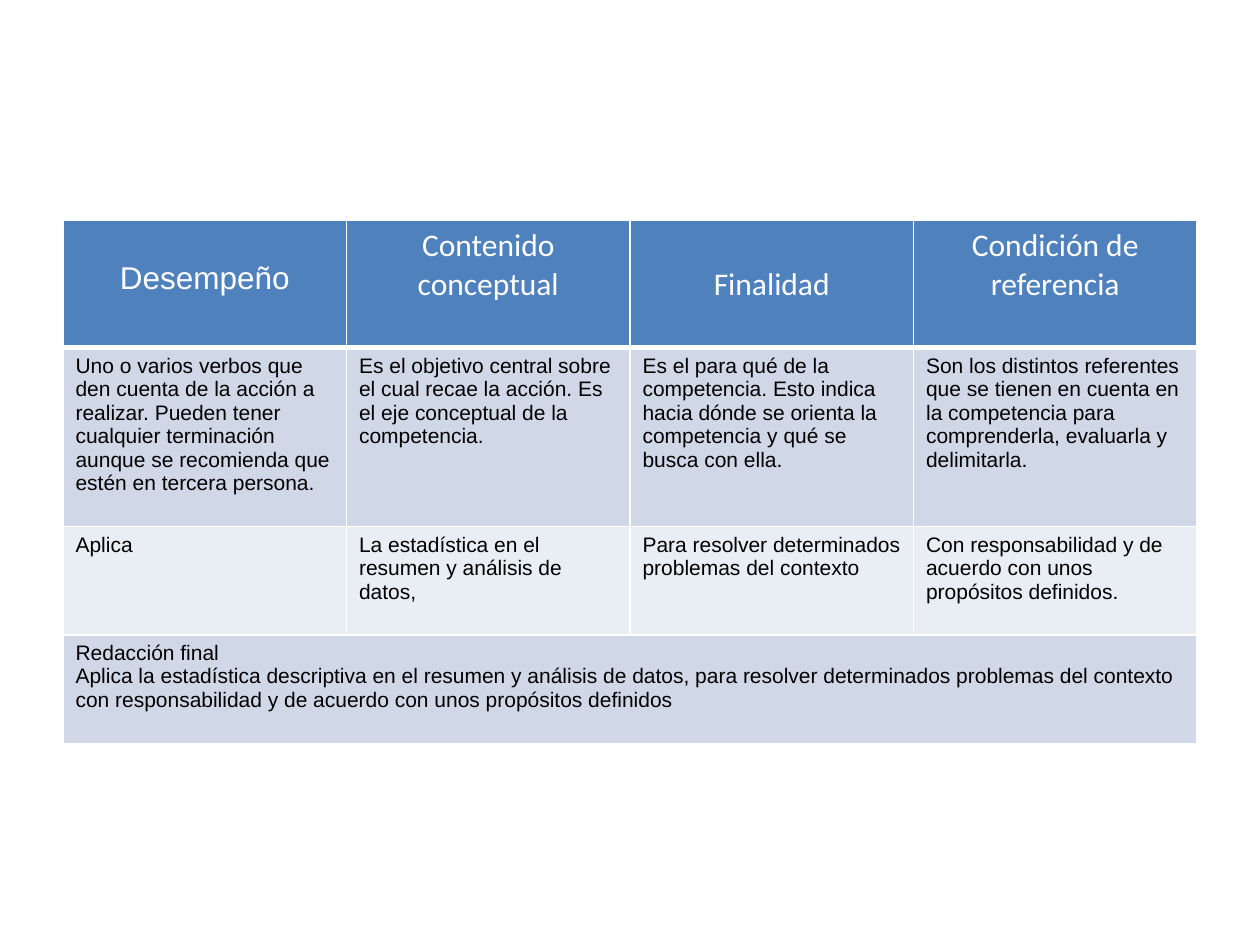
import pptx
import pptx.dml.color
import pptx.enum.text
import pptx.oxml
import pptx.oxml.ns
import pptx.util
from pptx.dml.color import RGBColor
from pptx.util import Inches

WHITE = RGBColor(0xFF, 0xFF, 0xFF)
BLACK = RGBColor(0x00, 0x00, 0x00)
BLUE = RGBColor(0x4F, 0x81, 0xBD)
BAND_DARK = RGBColor(0xD0, 0xD8, 0xE8)
BAND_LIGHT = RGBColor(0xE9, 0xED, 0xF4)

# Content: headings carry their font and top margin
HEADINGS = [
    ("Desempeño", "Arial", 0.32),
    ("Contenido conceptual", "Calibri", 0.05),
    ("Finalidad", "Calibri", 0.36),
    ("Condición de referencia", "Calibri", 0.05),
]
BODY = [
    [
        "Uno o varios verbos que den cuenta de la acción a realizar. Pueden tener "
        "cualquier terminación aunque se recomienda que estén en tercera persona.",
        "Es el objetivo central sobre el cual recae la acción. Es el eje conceptual "
        "de la competencia.",
        "Es el para qué de la competencia. Esto indica hacia dónde se orienta la "
        "competencia y qué se busca con ella.",
        "Son los distintos referentes que se tienen en cuenta en la competencia para "
        "comprenderla, evaluarla y delimitarla.",
    ],
    [
        "Aplica",
        "La estadística en el resumen y análisis de datos,",
        "Para resolver determinados problemas del contexto",
        "Con responsabilidad y de acuerdo con unos propósitos definidos.",
    ],
    [
        "Redacción final\n"
        "Aplica la estadística descriptiva en el resumen y análisis de datos, para "
        "resolver determinados problemas del contexto con responsabilidad y de "
        "acuerdo con unos propósitos definidos",
    ],
]
ROW_HEIGHTS = [1.01, 1.42, 0.86, 0.86]
TABLE_WIDTH = 9


def write(cell, text, font="Arial", size=12, color=BLACK, align=None, top=0.05):
    cell.margin_top = Inches(top)
    frame = cell.text_frame
    frame.text = text
    for para in frame.paragraphs:
        para.alignment = align
        for span in para.runs:
            span.font.name = font
            span.font.size = pptx.util.Pt(size)
            span.font.bold = False
            span.font.color.rgb = color


def set_borders(cell, bottom=1, top=1):
    properties = cell._tc.get_or_add_tcPr()
    widths = {"lnL": 1, "lnR": 1, "lnT": top, "lnB": bottom}
    for index, (side, width) in enumerate(widths.items()):
        line = pptx.oxml.parse_xml(
            f'<a:{side} {pptx.oxml.ns.nsdecls("a")} w="{pptx.util.Pt(width)}">'
            f'<a:solidFill><a:srgbClr val="{WHITE}"/></a:solidFill></a:{side}>'
        )
        properties.insert(index, line)


deck = pptx.Presentation()
deck.slide_width, deck.slide_height = Inches(10), Inches(7.5)
page = deck.slides.add_slide(deck.slide_layouts[6])

# Table grid
table = page.shapes.add_table(
    len(ROW_HEIGHTS), len(HEADINGS), Inches(0.5), Inches(1.75),
    Inches(TABLE_WIDTH), Inches(sum(ROW_HEIGHTS)),
).table
for column in table.columns:
    column.width = Inches(TABLE_WIDTH / len(HEADINGS))
for row, height in zip(table.rows, ROW_HEIGHTS):
    row.height = Inches(height)
table.cell(3, 0).merge(table.cell(3, 3))

# Fills and borders, with a thick rule under the headings
for number, row in enumerate(table.rows):
    for cell in row.cells:
        cell.fill.solid()
        cell.fill.fore_color.rgb = [BLUE, BAND_DARK, BAND_LIGHT, BAND_DARK][number]
        set_borders(cell, bottom=3 if number == 0 else 1, top=3 if number == 1 else 1)

# Headings
for column, (text, font, top) in enumerate(HEADINGS):
    write(table.cell(0, column), text, font=font, size=18, color=WHITE,
          align=pptx.enum.text.PP_ALIGN.CENTER, top=top)

# Body
for number, texts in enumerate(BODY, start=1):
    for column, text in enumerate(texts):
        write(table.cell(number, column), text)

deck.save("out.pptx")
